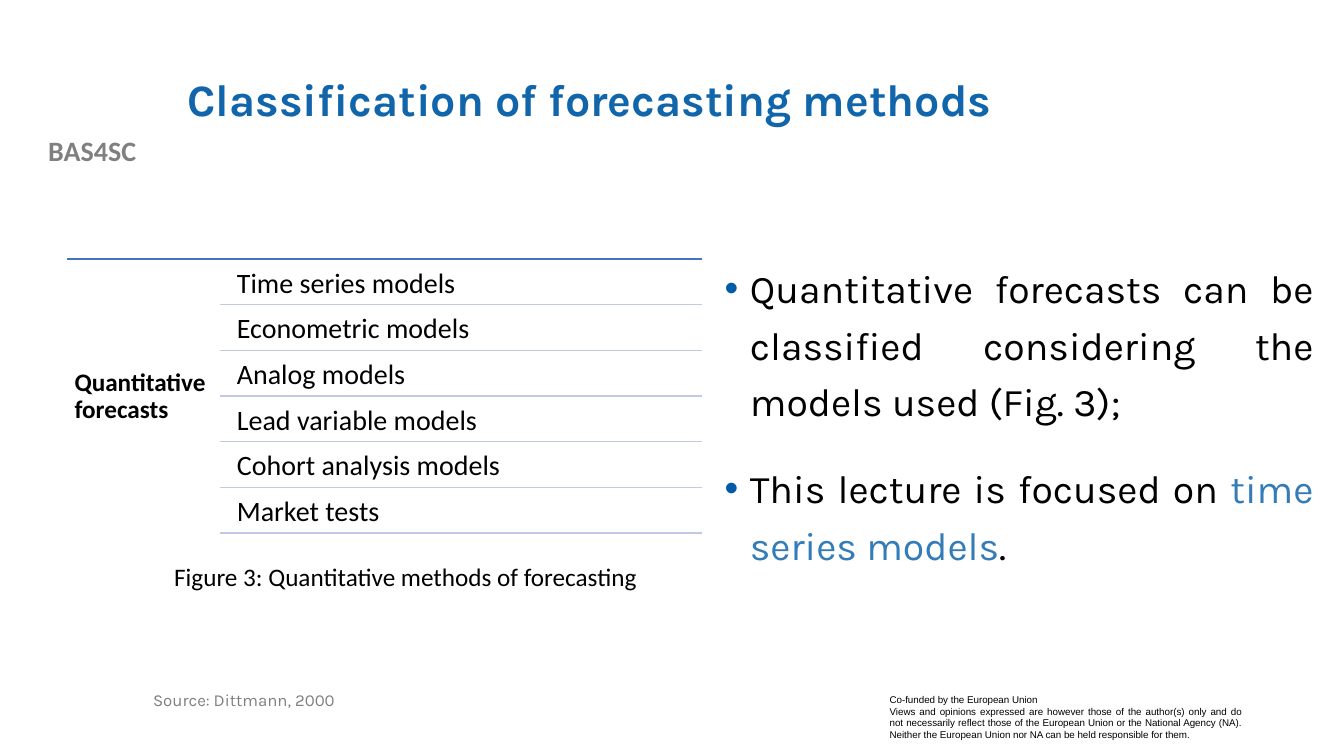
from dataclasses import dataclass
from typing import Optional

from lxml.etree import SubElement
from pptx import Presentation
from pptx.dml.color import RGBColor
from pptx.enum.shapes import MSO_CONNECTOR
from pptx.enum.text import MSO_ANCHOR, PP_ALIGN
from pptx.oxml.ns import qn
from pptx.util import Cm, Pt

BLACK = RGBColor(0, 0, 0)
WHITE = RGBColor(255, 255, 255)
GRAY = RGBColor(0x80, 0x80, 0x80)
SOURCE_GRAY = RGBColor(0x7F, 0x7F, 0x7F)
TITLE_BLUE = RGBColor(0x10, 0x65, 0xAB)
BULLET_BLUE = RGBColor(0x01, 0x5B, 0xA6)
TERM_BLUE = RGBColor(0x34, 0x7C, 0xB8)
RULE_BLUE = RGBColor(0x44, 0x72, 0xC4)
ROW_BLUE = RGBColor(0xC1, 0xC9, 0xE4)

LIST_LEFT, LIST_TOP, LIST_RIGHT = 1.7, 6.53, 17.7
ROW_LEFT, ROW_PITCH = 5.54, 1.15
HANGING = 0.64
METHODS = [
    "Time series models",
    "Econometric models",
    "Analog models",
    "Lead variable models",
    "Cohort analysis models",
    "Market tests",
]


@dataclass
class Label:
    paragraphs: list[str]
    left: float
    top: float
    width: float
    height: float
    size: float
    font: str = "Calibri"
    color: RGBColor = BLACK
    bold: bool = False
    align: PP_ALIGN = PP_ALIGN.LEFT
    anchor: MSO_ANCHOR = MSO_ANCHOR.TOP
    line_spacing: float = 1.0
    inset: Optional[float] = None
    fill: Optional[RGBColor] = None


@dataclass
class Rule:
    left: float
    y: float
    color: RGBColor


def add_label(slide, label: Label):
    sp = slide.shapes.add_textbox(
        Cm(label.left), Cm(label.top), Cm(label.width), Cm(label.height)
    )
    if label.fill is not None:
        sp.fill.solid()
        sp.fill.fore_color.rgb = label.fill
    tf = sp.text_frame
    tf.word_wrap = True
    tf.vertical_anchor = label.anchor
    if label.inset is not None:
        tf.margin_left = tf.margin_right = Cm(label.inset)
        tf.margin_top = tf.margin_bottom = Cm(label.inset)
    tf.text = "\n".join(label.paragraphs)
    for p in tf.paragraphs:
        p.alignment = label.align
        p.line_spacing = label.line_spacing
        for r in p.runs:
            style_run(r, label.font, label.size, label.color, label.bold)
    return sp


def style_run(r, font: str, size: float, color: RGBColor, bold: bool = False) -> None:
    r.font.name = font
    r.font.size = Pt(size)
    r.font.bold = bold
    r.font.color.rgb = color


def add_rule(slide, rule: Rule) -> None:
    line = slide.shapes.add_connector(
        MSO_CONNECTOR.STRAIGHT, Cm(rule.left), Cm(rule.y), Cm(LIST_RIGHT), Cm(rule.y)
    )
    line.line.color.rgb = rule.color
    line.line.width = Pt(1)
    SubElement(line._element.spPr, qn("a:effectLst"))


def add_bullet(p) -> None:
    pPr = p._p.get_or_add_pPr()
    pPr.set("marL", str(Cm(HANGING)))
    pPr.set("indent", str(-Cm(HANGING)))
    color = SubElement(pPr, qn("a:buClr"))
    SubElement(color, qn("a:srgbClr"), val=str(BULLET_BLUE))
    SubElement(pPr, qn("a:buFont"), typeface="Arial")
    SubElement(pPr, qn("a:buChar"), char="•")


def add_body(slide) -> None:
    body = Label(
        [
            "Quantitative forecasts can be classified considering the models used (Fig. 3);",
            "This lecture is focused on ",
        ],
        18.01, 6.3, 15.34, 9.27, 28, "Karla",
        align=PP_ALIGN.JUSTIFY, line_spacing=1.2,
    )
    first, second = add_label(slide, body).text_frame.paragraphs
    first.space_after = Pt(12)
    second.space_before = Pt(10)
    for text, color in [("time series models", TERM_BLUE), (".", BLACK)]:
        r = second.add_run()
        r.text = text
        style_run(r, body.font, body.size, color)
    for p in (first, second):
        add_bullet(p)


def add_method_list(slide) -> None:
    add_rule(slide, Rule(LIST_LEFT, LIST_TOP, RULE_BLUE))
    add_label(slide, Label(
        ["Quantitative forecasts"],
        LIST_LEFT, LIST_TOP, ROW_LEFT - LIST_LEFT, 6.96, 18,
        bold=True, anchor=MSO_ANCHOR.MIDDLE, line_spacing=0.9, inset=0.18,
    ))
    text_left = ROW_LEFT + 0.23
    for i, method in enumerate(METHODS):
        top = LIST_TOP + i * ROW_PITCH
        add_label(slide, Label(
            [method], text_left, top + 0.05, LIST_RIGHT - text_left, 1.09, 20,
            line_spacing=0.9, inset=0.2,
        ))
        add_rule(slide, Rule(ROW_LEFT, top + ROW_PITCH, ROW_BLUE))


def main() -> None:
    prs = Presentation()
    prs.slide_width, prs.slide_height = Cm(33.87), Cm(19.05)
    s = prs.slides.add_slide(prs.slide_layouts[6])
    labels = [
        Label(["BAS4SC"], 0, 3.25, 4.65, 1.12, 20,
              color=GRAY, bold=True, align=PP_ALIGN.CENTER),
        Label(
            [
                "Co-funded by the European Union",
                "Views and opinions expressed are however those of the author(s) only "
                "and do not necessarily reflect those of the European Union or the "
                "National Agency (NA). Neither the European Union nor NA can be held "
                "responsible for them.",
            ],
            22.17, 17.35, 9.37, 1.45, 7, "Arial", align=PP_ALIGN.JUSTIFY, fill=WHITE,
        ),
        Label(["Classification of forecasting methods"], 4.47, 1.02, 27.08, 3.1, 32,
              "Karla", TITLE_BLUE, True, anchor=MSO_ANCHOR.MIDDLE, line_spacing=0.9),
        Label(["Source: Dittmann, 2000"], 3.61, 17.32, 16.94, 0.71, 12,
              "Karla", SOURCE_GRAY, line_spacing=0.9),
        Label(["Figure 3: Quantitative methods of forecasting"],
              4.14, 14.02, 12.6, 1.02, 18),
    ]
    for label in labels:
        add_label(s, label)
    add_body(s)
    add_method_list(s)
    prs.save("out.pptx")


if __name__ == "__main__":
    main()
